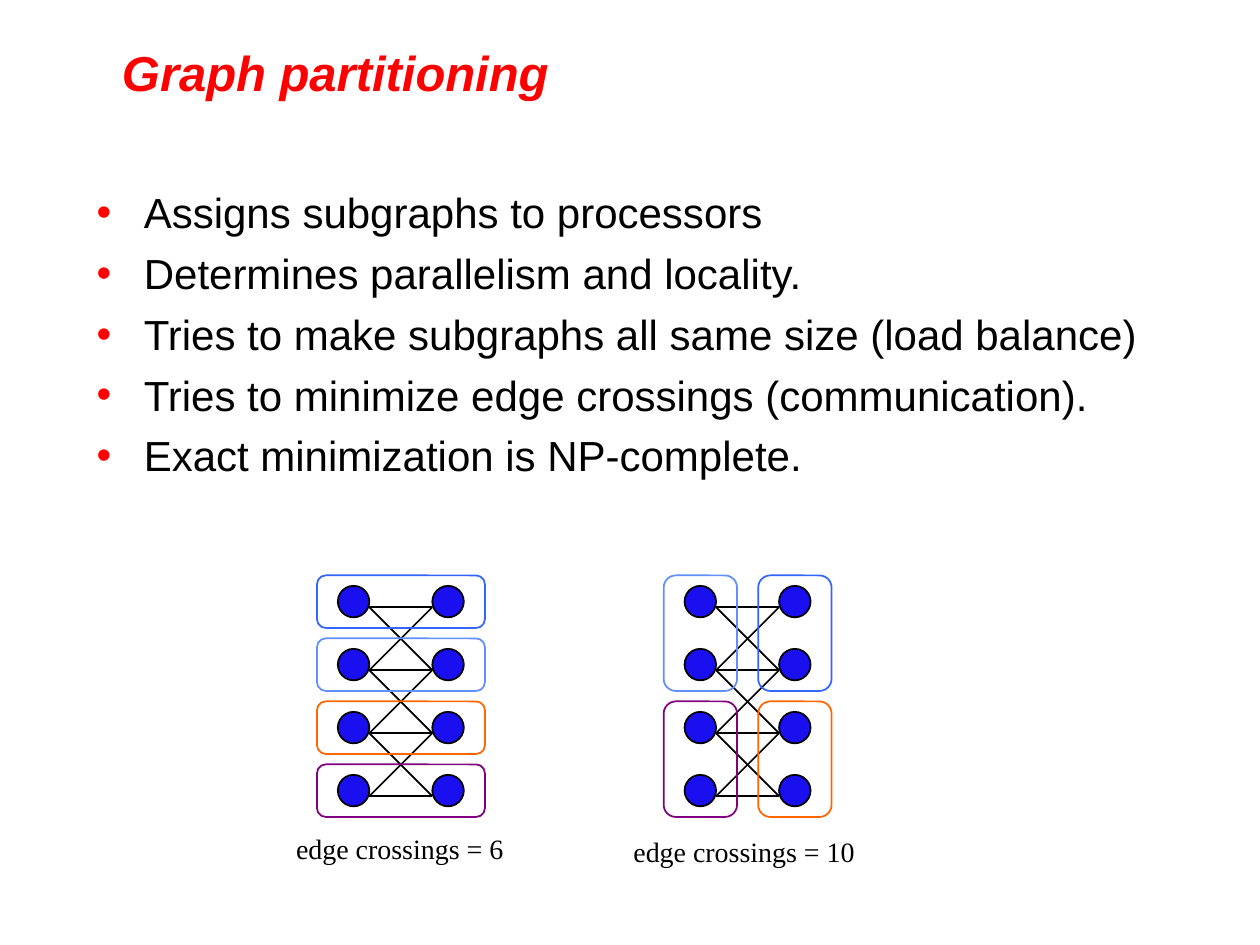
from dataclasses import dataclass
from itertools import product

from lxml import etree
from pptx import Presentation
from pptx import util as u
from pptx.dml.color import RGBColor
from pptx.enum import shapes, text
from pptx.oxml import ns


@dataclass(frozen=True)
class Theme:
    red: str = "FF0000"
    black: str = "000000"
    node: str = "1A0FEF"
    blue: str = "3366FF"
    sky: str = "618FFD"
    orange: str = "FF6600"
    purple: str = "800080"
    sans: str = "Arial"
    serif: str = "Times New Roman"
    title_size: int = 28
    body_size: int = 24
    caption_size: int = 16
    stroke: int = 1


THEME = Theme()
ROWS, COLUMNS = 4, 2
ROW_PITCH, COLUMN_PITCH = 1.27, 1.905
NODE_SIZE = 0.635
NODE_TOP = 11.81
EDGE_DROP = 0.43
PART_MARGIN_X, PART_MARGIN_Y = 0.42, 0.21
PART_WIDTH, PART_HEIGHT = 1.48, 1.06

POINTS = [
    "Assigns subgraphs to processors",
    "Determines parallelism and locality.",
    "Tries to make subgraphs all same size (load balance)",
    "Tries to minimize edge crossings (communication).",
    "Exact minimization is NP-complete.",
]


def set_values(target, values):
    for name, value in values.items():
        setattr(target, name, value)


def add_text(parent, box, lines, color, frame_format, font_format):
    textbox = parent.shapes.add_textbox(*map(u.Cm, box))
    frame = textbox.text_frame
    set_values(frame, frame_format)
    frame.text = "\n".join(lines)
    for paragraph in frame.paragraphs:
        font = paragraph.runs[0].font
        set_values(font, font_format)
        font.color.rgb = RGBColor.from_string(color)
    return frame


def add_bullet(paragraph):
    paragraph.space_after = u.Pt(5.9)
    properties = paragraph._p.get_or_add_pPr()
    indent = u.Cm(0.95)
    properties.set("marL", str(indent))
    properties.set("indent", str(-indent))
    color = etree.SubElement(properties, ns.qn("a:buClr"))
    etree.SubElement(color, ns.qn("a:srgbClr"), val=THEME.red)
    etree.SubElement(properties, ns.qn("a:buFont"), typeface=THEME.sans)
    etree.SubElement(properties, ns.qn("a:buChar"), char="•")


def set_stroke(line, color):
    line.color.rgb = RGBColor.from_string(color)
    line.width = u.Pt(THEME.stroke)


def add_outline(graph, kind, box, stroke, fill=None):
    outline = graph.shapes.add_shape(kind, *map(u.Cm, box))
    outline.shadow.inherit = False
    set_stroke(outline.line, stroke)
    if fill:
        outline.fill.solid()
        outline.fill.fore_color.rgb = RGBColor.from_string(fill)
    else:
        outline.fill.background()


def add_edge(graph, start, end):
    edge = graph.shapes.add_connector(
        shapes.MSO_CONNECTOR.STRAIGHT, *map(u.Cm, (*start, *end)))
    set_stroke(edge.line, THEME.black)
    etree.SubElement(edge._element.spPr, ns.qn("a:effectLst"))


def add_graph(slide, left, parts, caption, caption_box):
    graph = slide.shapes.add_group_shape()
    for row, column in product(range(ROWS), range(COLUMNS)):
        box = (left + column * COLUMN_PITCH, NODE_TOP + row * ROW_PITCH,
               NODE_SIZE, NODE_SIZE)
        add_outline(graph, shapes.MSO_SHAPE.OVAL, box, THEME.black, THEME.node)

    edge_top = NODE_TOP + EDGE_DROP
    for source, target in product(range(ROWS), repeat=2):
        if abs(source - target) <= 1:
            add_edge(graph,
                     (left + NODE_SIZE, edge_top + source * ROW_PITCH),
                     (left + COLUMN_PITCH, edge_top + target * ROW_PITCH))

    for row, column, row_span, column_span, color in parts:
        box = (left - PART_MARGIN_X + column * COLUMN_PITCH,
               NODE_TOP - PART_MARGIN_Y + row * ROW_PITCH,
               PART_WIDTH + (column_span - 1) * COLUMN_PITCH,
               PART_HEIGHT + (row_span - 1) * ROW_PITCH)
        add_outline(graph, shapes.MSO_SHAPE.ROUNDED_RECTANGLE, box, color)

    add_text(graph, caption_box, [caption], THEME.black,
             {"word_wrap": False,
              "auto_size": text.MSO_AUTO_SIZE.SHAPE_TO_FIT_TEXT},
             {"name": THEME.serif, "size": u.Pt(THEME.caption_size)})


def main():
    deck = Presentation()
    set_values(deck, {"slide_width": u.Cm(25.4), "slide_height": u.Cm(19.05)})
    slide = deck.slides.add_slide(deck.slide_layouts[6])

    add_text(slide, (2.21, 0.86, 22.12, 1.17), ["Graph partitioning"],
             THEME.red,
             {"word_wrap": True, "vertical_anchor": text.MSO_ANCHOR.MIDDLE},
             {"name": THEME.sans, "size": u.Pt(THEME.title_size),
              "bold": True, "italic": True})
    body = add_text(slide, (1.7, 2.54, 22.23, 8), POINTS, THEME.black,
                    {"word_wrap": True, "margin_top": u.Cm(1.23)},
                    {"name": THEME.sans, "size": u.Pt(THEME.body_size)})
    for paragraph in body.paragraphs:
        add_bullet(paragraph)

    colors = (THEME.blue, THEME.sky, THEME.orange, THEME.purple)
    row_parts = [(row, 0, 1, 2, color) for row, color in enumerate(colors)]
    block_parts = [(row, column, 2, 1, color) for (row, column), color
                   in zip(product((0, 2), (1, 0)), colors)]
    add_graph(slide, 6.81, row_parts, "edge crossings = 6",
              (5.72, 16.64, 4.7, 0.94))
    add_graph(slide, 13.8, block_parts, "edge crossings = 10",
              (12.52, 16.69, 5, 0.94))
    deck.save("out.pptx")


if __name__ == "__main__":
    main()
